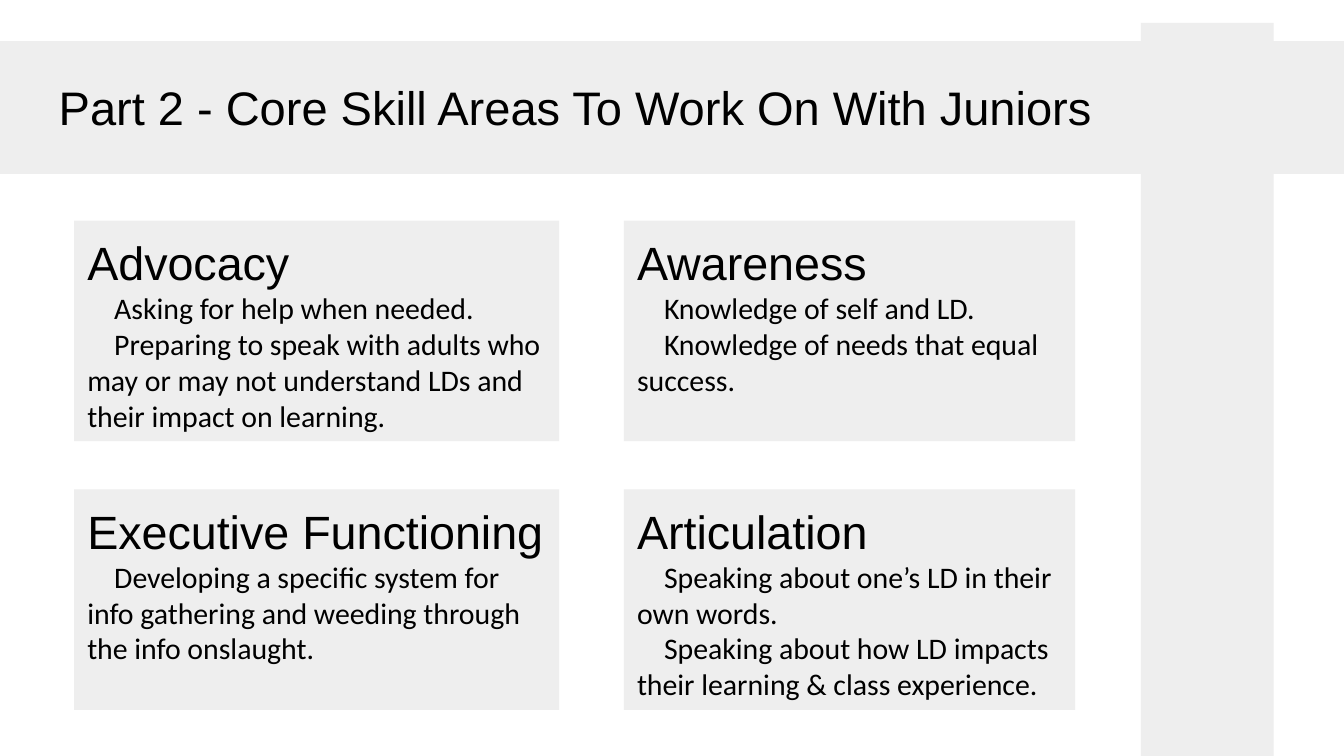
from pptx import Presentation
from pptx import util as u
from pptx.dml import color
from pptx.enum import shapes, text

GREY, BLACK = "EEEEEE", "000000"
HEAD = {"name": "Arial", "size": u.Pt(25)}
BODY = {"name": "Calibri", "size": u.Pt(16)}
TITLE = {"name": "Arial", "size": u.Pt(25.2)}
FRAME = {
    "word_wrap": True,
    "auto_size": text.MSO_AUTO_SIZE.NONE,
    "vertical_anchor": text.MSO_ANCHOR.TOP,
    **{f"margin_{side}": u.Cm(0.25) for side in ("left", "top", "right", "bottom")},
}

TOP, STEP, TALL = 4.17, 5.08, 4.17
# Each column: left, width, and its cards from top to bottom
COLS = [
    (1.4, 9.17, [
        ("Advocacy", [
            "Asking for help when needed.",
            "Preparing to speak with adults who may or may not understand "
            "LDs and their impact on learning.",
        ]),
        ("Executive Functioning", [
            "Developing a specific system for info gathering and weeding "
            "through the info onslaught.",
        ]),
    ]),
    (11.79, 8.53, [
        ("Awareness", [
            "Knowledge of self and LD.",
            "Knowledge of needs that equal success.",
        ]),
        ("Articulation", [
            "Speaking about one’s LD in their own words.",
            "Speaking about how LD impacts their learning & class experience.",
        ]),
    ]),
]


def rgb(code):
    return color.RGBColor.from_string(code)


def put(item, values):
    """Set each named attribute of item."""
    for name, value in values.items():
        setattr(item, name, value)


def band(slide, *box):
    """Add a plain grey block; box is left, top, width, height in cm."""
    block = slide.shapes.add_shape(shapes.MSO_SHAPE.RECTANGLE, *map(u.Cm, box))
    block.shadow.inherit = False
    block.fill.solid()
    block.fill.fore_color.rgb = rgb(GREY)
    block.line.fill.background()
    return block


def write(para, words, font, indent=0):
    para.alignment = text.PP_ALIGN.LEFT
    if indent:
        para._p.get_or_add_pPr().set("indent", str(u.Cm(indent)))
    run = para.add_run()
    run.text = words
    put(run.font, font)
    run.font.color.rgb = rgb(BLACK)


def title(slide, words):
    box = slide.shapes.add_textbox(*map(u.Cm, (0.86, 1.24, 23.67, 1.6)))
    put(box.text_frame, FRAME)
    write(box.text_frame.paragraphs[0], words, TITLE)


def card(slide, box, head, lines):
    frame = band(slide, *box).text_frame
    put(frame, FRAME)
    write(frame.paragraphs[0], head, HEAD)
    for line in lines:
        write(frame.add_paragraph(), line, BODY, indent=0.51)


def main():
    deck = Presentation()
    put(deck, {"slide_width": u.Cm(25.4), "slide_height": u.Cm(14.29)})
    slide = deck.slides.add_slide(deck.slide_layouts[6])
    band(slide, 0, 0.78, 25.4, 2.51)
    title(slide, "Part 2 - Core Skill Areas To Work On With Juniors")
    band(slide, 15.67, 6.32, 14.29, 2.51).rotation = 270
    for left, width, cards in COLS:
        for row, (head, lines) in enumerate(cards):
            card(slide, (left, TOP + row * STEP, width, TALL), head, lines)
    deck.save("out.pptx")


if __name__ == "__main__":
    main()
